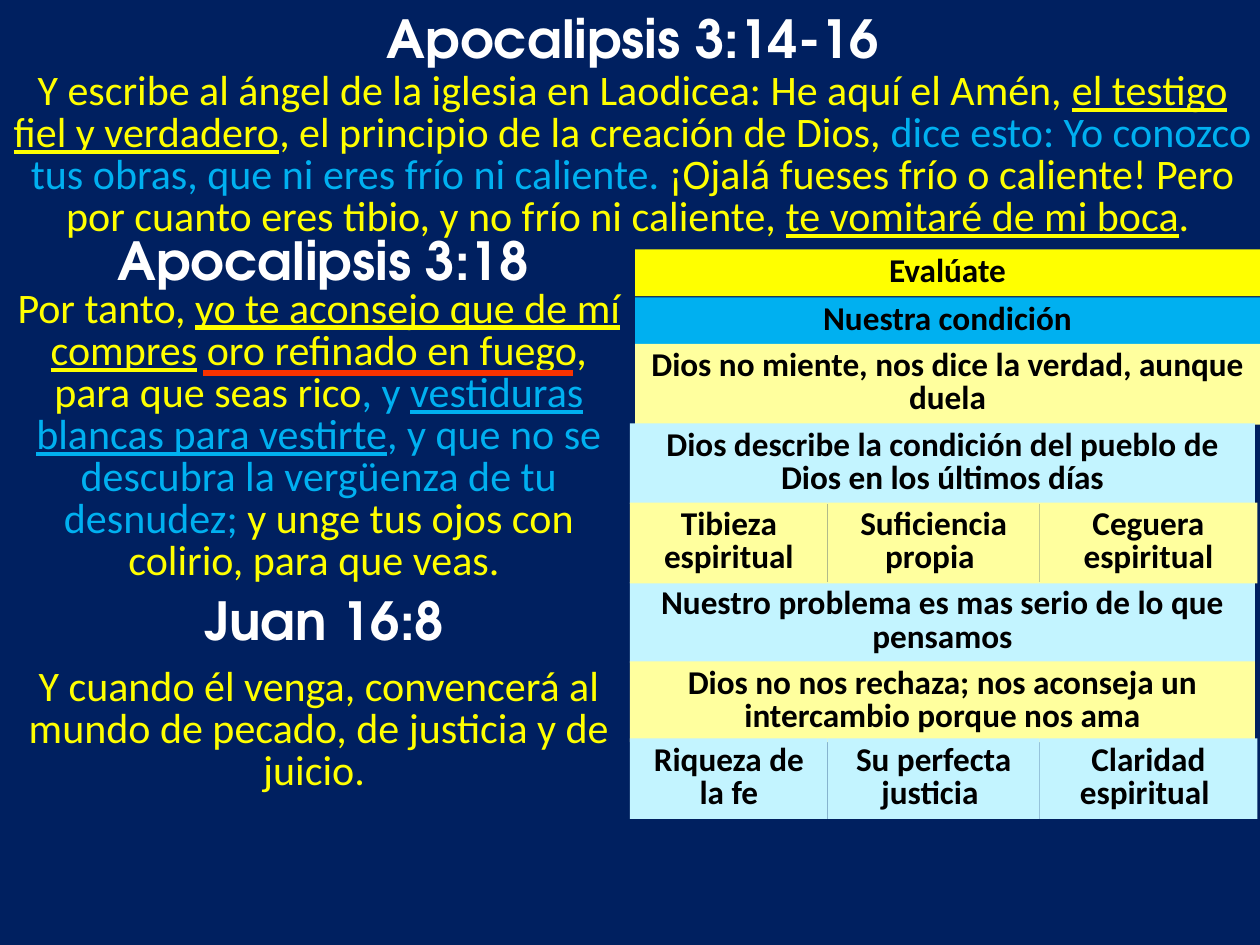
from lxml.etree import SubElement
from pptx import Presentation
from pptx.dml.color import RGBColor
from pptx.enum.shapes import MSO_CONNECTOR, MSO_SHAPE
from pptx.enum.text import MSO_ANCHOR, MSO_AUTO_SIZE, PP_ALIGN
from pptx.oxml.ns import qn
from pptx.util import Inches, Pt

NAVY = RGBColor(0x00, 0x20, 0x60)
WHITE = RGBColor(0xFF, 0xFF, 0xFF)
BLACK = RGBColor(0x00, 0x00, 0x00)
YELLOW = RGBColor(0xFF, 0xFF, 0x00)
BLUE = RGBColor(0x00, 0xB0, 0xF0)
CREAM = RGBColor(0xFF, 0xFF, 0x9E)
ICE = RGBColor(0xC3, 0xF4, 0xFF)
RED = RGBColor(0xF9, 0x32, 0x00)


class Page:
    HEAD = "TeX Gyre Adventor"
    BODY = "Calibri"

    def __init__(self, slide):
        self.slide = slide
        slide.background.fill.solid()
        slide.background.fill.fore_color.rgb = NAVY

    def fill_text(self, shape, runs, font, size, color, bold=False, space=None):
        """Set centred text; a run is (text, underlined, colour or None)."""
        frame = shape.text_frame
        frame.word_wrap = True
        frame.auto_size = MSO_AUTO_SIZE.SHAPE_TO_FIT_TEXT
        frame.vertical_anchor = MSO_ANCHOR.TOP
        para = frame.paragraphs[0]
        para.alignment = PP_ALIGN.CENTER
        if space:
            para.line_spacing = Pt(space)
        para.font.name = font
        para.font.size = Pt(size)
        para.font.bold = bold
        para.font.color.rgb = color
        for text, under, tint in runs:
            run = para.add_run()
            run.text = text
            if under:
                run.font.underline = True
            if tint:
                run.font.color.rgb = tint

    def text_box(self, left, top, width, height):
        return self.slide.shapes.add_textbox(
            Inches(left), Inches(top), Inches(width), Inches(height))

    def head(self, left, top, width, height, text):
        box = self.text_box(left, top, width, height)
        self.fill_text(box, [(text, False, None)], self.HEAD, 30, WHITE, True)

    def verse(self, left, top, width, height, runs):
        box = self.text_box(left, top, width, height)
        self.fill_text(box, runs, self.BODY, 24, YELLOW, space=24)

    def bar(self, left, top, width, height, color, text):
        shape = self.slide.shapes.add_shape(
            MSO_SHAPE.RECTANGLE, Inches(left), Inches(top),
            Inches(width), Inches(height))
        shape.shadow.inherit = False
        shape.fill.solid()
        shape.fill.fore_color.rgb = color
        shape.line.fill.background()
        self.fill_text(shape, [(text, False, None)], self.BODY, 19, BLACK, True, 19)

    def trio(self, top, color, texts):
        """Draw three bars side by side."""
        spans = [(5, 1.57), (6.57, 1.68), (8.25, 1.73)]
        for (left, width), text in zip(spans, texts):
            self.bar(left, top, width, 0.64, color, text)

    def rule(self, left, right, y, color, weight):
        line = self.slide.shapes.add_connector(
            MSO_CONNECTOR.STRAIGHT, Inches(left), Inches(y), Inches(right), Inches(y))
        line.line.color.rgb = color
        line.line.width = Pt(weight)
        SubElement(line._element.spPr, qn("a:effectLst"))


def main():
    deck = Presentation()
    deck.slide_width, deck.slide_height = Inches(10), Inches(7.5)
    page = Page(deck.slides.add_slide(deck.slide_layouts[6]))

    page.head(2.64, 0, 4.65, 1.11, " Apocalipsis 3:14-16")
    page.verse(-0.04, 0.52, 10.12, 1.45, [
        ("Y escribe al ángel de la iglesia en Laodicea: He aquí el Amén, ", False, None),
        ("el testigo fiel y verdadero", True, None),
        (", el principio de la creación de Dios, ", False, None),
        ("dice esto: Yo conozco tus obras, que ni eres frío ni caliente. ", False, BLUE),
        ("¡Ojalá fueses frío o caliente! Pero por cuanto eres tibio, "
         "y no frío ni caliente, ", False, None),
        ("te vomitaré de mi boca", True, None),
        (". ", False, None),
    ])

    bars = [
        (5.04, 1.98, 0.37, YELLOW, "Evalúate"),
        (5.04, 2.36, 0.37, BLUE, "Nuestra condición"),
        (5.04, 2.73, 0.64, CREAM, "Dios no miente, nos dice la verdad, aunque duela"),
        (5, 3.36, 0.64, ICE,
         "Dios describe la condición del pueblo de Dios en los últimos días"),
        (5, 4.62, 0.64, ICE, "Nuestro problema es mas serio de lo que pensamos"),
        (5, 5.25, 0.64, CREAM,
         "Dios no nos rechaza; nos aconseja un intercambio porque nos ama"),
    ]
    for left, top, height, color, text in bars:
        page.bar(left, top, 4.96, height, color, text)
    page.trio(3.99, CREAM,
              ["Tibieza espiritual", "Suficiencia propia ", "Ceguera espiritual"])
    page.trio(5.86, ICE,
              ["Riqueza de la fe", "Su perfecta justicia ", "Claridad espiritual "])

    page.head(0.46, 1.76, 4.09, 0.61, " Apocalipsis 3:18")
    page.verse(0.04, 2.25, 4.98, 2.46, [
        ("Por tanto, ", False, None),
        ("yo te aconsejo que de mí compres", True, None),
        (" oro refinado en fuego, para que seas rico", False, None),
        (", y ", False, BLUE),
        ("vestiduras blancas para vestirte", True, BLUE),
        (", y que no se descubra la vergüenza de tu desnudez; ", False, BLUE),
        ("y unge tus ojos con colirio, para que veas. ", False, None),
    ])
    page.rule(1.61, 4.55, 2.96, RED, 3)

    page.head(0.47, 4.62, 4.09, 0.61, " Juan 16:8")
    page.verse(0.04, 5.25, 4.98, 1.12, [
        ("Y cuando él venga, convencerá al mundo de pecado, "
         "de justicia y de juicio. ", False, None),
    ])
    deck.save("out.pptx")


if __name__ == "__main__":
    main()
